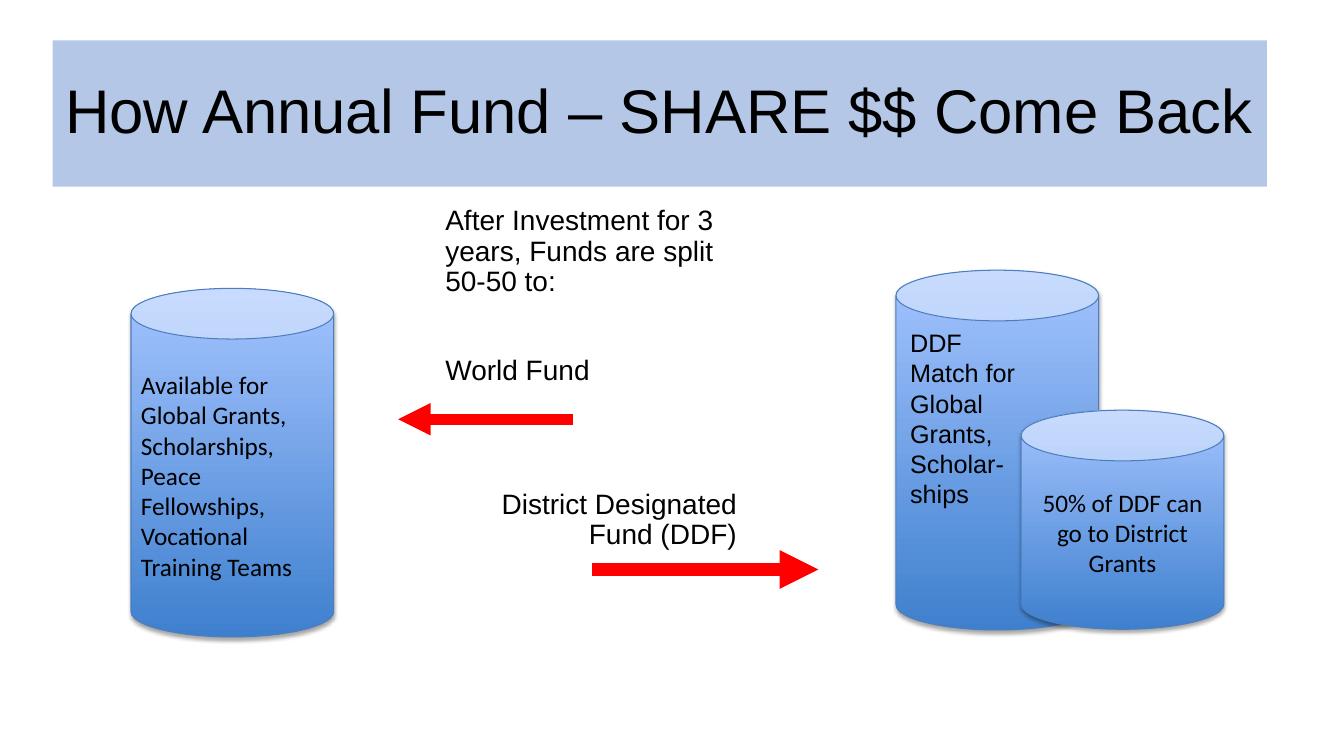
from lxml import etree
from pptx import Presentation
from pptx.dml.color import RGBColor
from pptx.enum.shapes import MSO_CONNECTOR, MSO_SHAPE
from pptx.enum.text import MSO_ANCHOR, PP_ALIGN
from pptx.oxml import parse_xml
from pptx.oxml.ns import nsdecls, qn
from pptx.util import Pt

BLACK = RGBColor(0x00, 0x00, 0x00)
RED = RGBColor(0xFF, 0x00, 0x00)
TITLE_BLUE = RGBColor(0xB4, 0xC7, 0xE7)
CAN_DARK = RGBColor(0x3F, 0x80, 0xCE)
CAN_LIGHT = RGBColor(0xA4, 0xC4, 0xFF)
CAN_LINE = RGBColor(0x4B, 0x7E, 0xBC)

CAN_SHADOW = (
    f'<a:effectLst {nsdecls("a")}>'
    '<a:outerShdw blurRad="39370" dist="22860" dir="5400000" rotWithShape="0">'
    '<a:srgbClr val="000000"><a:alpha val="35000"/></a:srgbClr>'
    '</a:outerShdw></a:effectLst>'
)


def write(paragraph, text, size, font="Arial", align=PP_ALIGN.LEFT):
    paragraph.text = text
    paragraph.alignment = align
    paragraph.font.size = Pt(size)
    paragraph.font.name = font
    paragraph.font.color.rgb = BLACK


def add_text_box(left, top, width, height):
    box = slide.shapes.add_textbox(Pt(left), Pt(top), Pt(width), Pt(height))
    box.text_frame.word_wrap = True
    return box.text_frame


presentation = Presentation()
presentation.slide_width = Pt(960)
presentation.slide_height = Pt(540)
slide = presentation.slides.add_slide(presentation.slide_layouts[6])

title = slide.shapes.add_shape(MSO_SHAPE.RECTANGLE, Pt(37.5), Pt(28.8), Pt(867.5), Pt(104.5))
title.shadow.inherit = False
title.fill.solid()
title.fill.fore_color.rgb = TITLE_BLUE
title.line.fill.background()
title.text_frame.vertical_anchor = MSO_ANCHOR.MIDDLE
title_paragraph = title.text_frame.paragraphs[0]
write(title_paragraph, "How Annual Fund – SHARE $$ Come Back", 44, align=PP_ALIGN.CENTER)
title_paragraph.line_spacing = 0.9

cans = [
    (640, 193, 257, "", PP_ALIGN.LEFT),
    (93.6, 206, 249, "Available for Global Grants, Scholarships, Peace Fellowships, "
     "Vocational Training Teams", PP_ALIGN.LEFT),
    (729.4, 293, 156.5, "50% of DDF can go to District Grants", PP_ALIGN.CENTER),
]
for left, top, height, text, align in cans:
    can = slide.shapes.add_shape(MSO_SHAPE.CAN, Pt(left), Pt(top), Pt(144.8), Pt(height))
    can.fill.gradient()
    can.fill.gradient_angle = 90
    for stop, color in zip(can.fill.gradient_stops, (CAN_DARK, CAN_LIGHT)):
        stop.color.rgb = color
    can.fill.gradient_stops[0].position = 0
    can.fill.gradient_stops[1].position = 1
    can.line.color.rgb = CAN_LINE
    can.line.width = Pt(0.75)
    can._element.spPr.append(parse_xml(CAN_SHADOW))
    if text:
        can.text_frame.word_wrap = True
        can.text_frame.vertical_anchor = MSO_ANCHOR.MIDDLE
        write(can.text_frame.paragraphs[0], text, 18, "Calibri", align)

split_frame = add_text_box(311, 144, 222.5, 311)
split_lines = [
    ("After Investment for 3 years, Funds are split 50-50 to:", 10, PP_ALIGN.LEFT),
    ("World Fund", 42, PP_ALIGN.LEFT),
    ("District Designated Fund (DDF)", 74, PP_ALIGN.RIGHT),
]
for index, (text, space_before, align) in enumerate(split_lines):
    paragraph = split_frame.add_paragraph() if index else split_frame.paragraphs[0]
    write(paragraph, text, 20, align=align)
    paragraph.line_spacing = 0.9
    paragraph.space_before = Pt(space_before)

match_frame = add_text_box(643, 230.4, 92.9, 138.2)
write(match_frame.paragraphs[0], "DDF Match for Global Grants, Scholar-ships", 18)

arrows = [(409, 284.4, 299.5, 7.75), (422.6, 584.6, 406.8, 9.25)]
for start, end, y, width in ((409, 284.4, 299.5, 7.75), (422.6, 584.6, 406.8, 9.25)):
    arrow = slide.shapes.add_connector(MSO_CONNECTOR.STRAIGHT, Pt(start), Pt(y), Pt(end), Pt(y))
    arrow.line.color.rgb = RED
    arrow.line.width = Pt(width)
    etree.SubElement(arrow.line._get_or_add_ln(), qn("a:tailEnd"), type="triangle")
    etree.SubElement(arrow._element.spPr, qn("a:effectLst"))

presentation.save("out.pptx")
